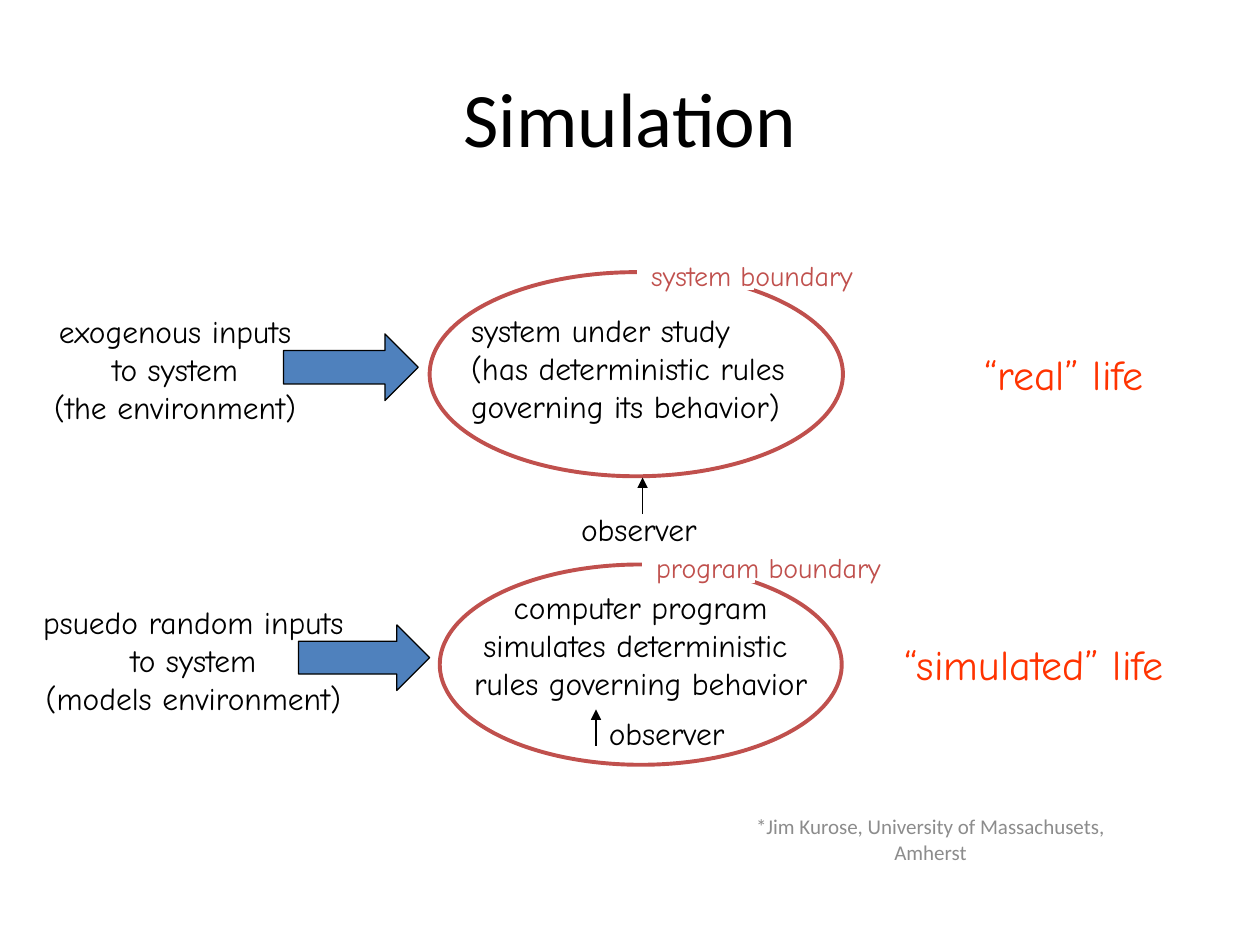
from dataclasses import dataclass

from lxml import etree
from pptx import Presentation
from pptx.dml.color import RGBColor
from pptx.enum import shapes, text
from pptx.oxml import ns
from pptx.util import Inches, Pt


@dataclass(frozen=True)
class Theme:
    black: str = "000000"
    white: str = "FFFFFF"
    grey: str = "8C8C8C"
    red: str = "C0504D"
    blue: str = "4F81BD"
    orange: str = "FF3300"
    body_font: str = "Comic Neue"
    head_font: str = "Calibri"
    title: int = 44
    life: int = 24
    body: int = 18
    label: int = 16
    credit: int = 12


theme = Theme()
LEFT, CENTER = text.PP_ALIGN.LEFT, text.PP_ALIGN.CENTER
KIND = shapes.MSO_SHAPE


def add_text(box, lines, size, color=theme.black, align=CENTER,
             font=theme.body_font, wrap=False):
    tf = s.shapes.add_textbox(*map(Inches, box)).text_frame
    tf.word_wrap = wrap
    if wrap:
        tf.vertical_anchor = text.MSO_ANCHOR.MIDDLE
    else:
        tf.auto_size = text.MSO_AUTO_SIZE.SHAPE_TO_FIT_TEXT
    for i, line in enumerate(lines):
        p = tf.add_paragraph() if i else tf.paragraphs[0]
        p.alignment = align
        r = p.add_run()
        r.text = line
        r.font.name = font
        r.font.size = Pt(size)
        r.font.color.rgb = RGBColor.from_string(color)


def add_shape(kind, box, fill, line, width):
    sp = s.shapes.add_shape(kind, *map(Inches, box))
    sp.shadow.inherit = False
    sp.fill.solid()
    sp.fill.fore_color.rgb = RGBColor.from_string(fill)
    sp.line.color.rgb = RGBColor.from_string(line)
    sp.line.width = Pt(width)


prs = Presentation()
prs.slide_width, prs.slide_height = Inches(10), Inches(7.5)
s = prs.slides.add_slide(prs.slide_layouts[6])

# Title and credit
add_text((0.5, 0.3, 9, 1.25), ["Simulation"], theme.title,
         font=theme.head_font, wrap=True)
add_text((5.8, 6.4, 3.17, 0.52),
         ["*Jim Kurose, University of Massachusets, Amherst"],
         theme.credit, theme.grey, font=theme.head_font, wrap=True)

# The real system and its simulated counterpart
diagrams = [
    dict(
        boundary=(3.41, 2.16, 3.28, 1.62),
        system=(3.64, 2.42, 3.05, 1), system_align=LEFT,
        system_lines=["system under study", "(has deterministic rules",
                      "governing its behavior)"],
        arrow=(2.25, 2.65, 1.07, 0.53),
        inputs=(0.25, 2.43, 2.28, 1),
        input_lines=["exogenous inputs", "to system", "(the environment)"],
        gap=(5.06, 2.11, 0.92, 0.19),
        label=(5.07, 2, 1.95, 0.37), label_text="system boundary",
        pointer=(5.1, 4.08, 5.1, 3.79), observer=(4.45, 4, 1.24, 0.4),
        life=(7.59, 2.72, 1.71, 0.5), life_text="“real” life",
    ),
    dict(
        boundary=(3.49, 4.48, 3.19, 1.59),
        system=(3.57, 4.62, 3.03, 1), system_align=CENTER,
        system_lines=["computer program", "simulates deterministic ",
                      "rules governing behavior"],
        arrow=(2.37, 4.96, 1.04, 0.52),
        inputs=(0.18, 4.74, 2.71, 1),
        input_lines=["psuedo random inputs", "to system",
                     "(models environment)"],
        gap=(5.1, 4.43, 0.89, 0.19),
        label=(5.11, 4.32, 2.07, 0.37), label_text="program boundary",
        pointer=(4.73, 5.92, 4.73, 5.63), observer=(4.67, 5.62, 1.24, 0.4),
        life=(6.91, 5.02, 2.59, 0.5), life_text="“simulated” life",
    ),
]

for d in diagrams:
    # System inside its boundary
    add_shape(KIND.OVAL, d["boundary"], theme.white, theme.red, 2.25)
    add_text(d["system"], d["system_lines"], theme.body,
             align=d["system_align"])

    # Inputs
    add_shape(KIND.RIGHT_ARROW, d["arrow"], theme.blue, theme.black, 0.75)
    add_text(d["inputs"], d["input_lines"], theme.body)

    # Boundary label over a gap in the outline
    add_shape(KIND.RECTANGLE, d["gap"], theme.white, theme.white, 0.75)
    add_text(d["label"], [d["label_text"]], theme.label, theme.red, LEFT)

    # Observer with its pointer
    pointer = s.shapes.add_connector(shapes.MSO_CONNECTOR.STRAIGHT,
                                     *map(Inches, d["pointer"]))
    pointer.line.color.rgb = RGBColor.from_string(theme.black)
    pointer.line.width = Pt(0.75)
    etree.SubElement(pointer.line._get_or_add_ln(), ns.qn("a:tailEnd"),
                     type="triangle")
    etree.SubElement(pointer._element.spPr, ns.qn("a:effectLst"))
    add_text(d["observer"], ["observer"], theme.body)

    # Kind of life
    add_text(d["life"], [d["life_text"]], theme.life, theme.orange)

prs.save("out.pptx")
